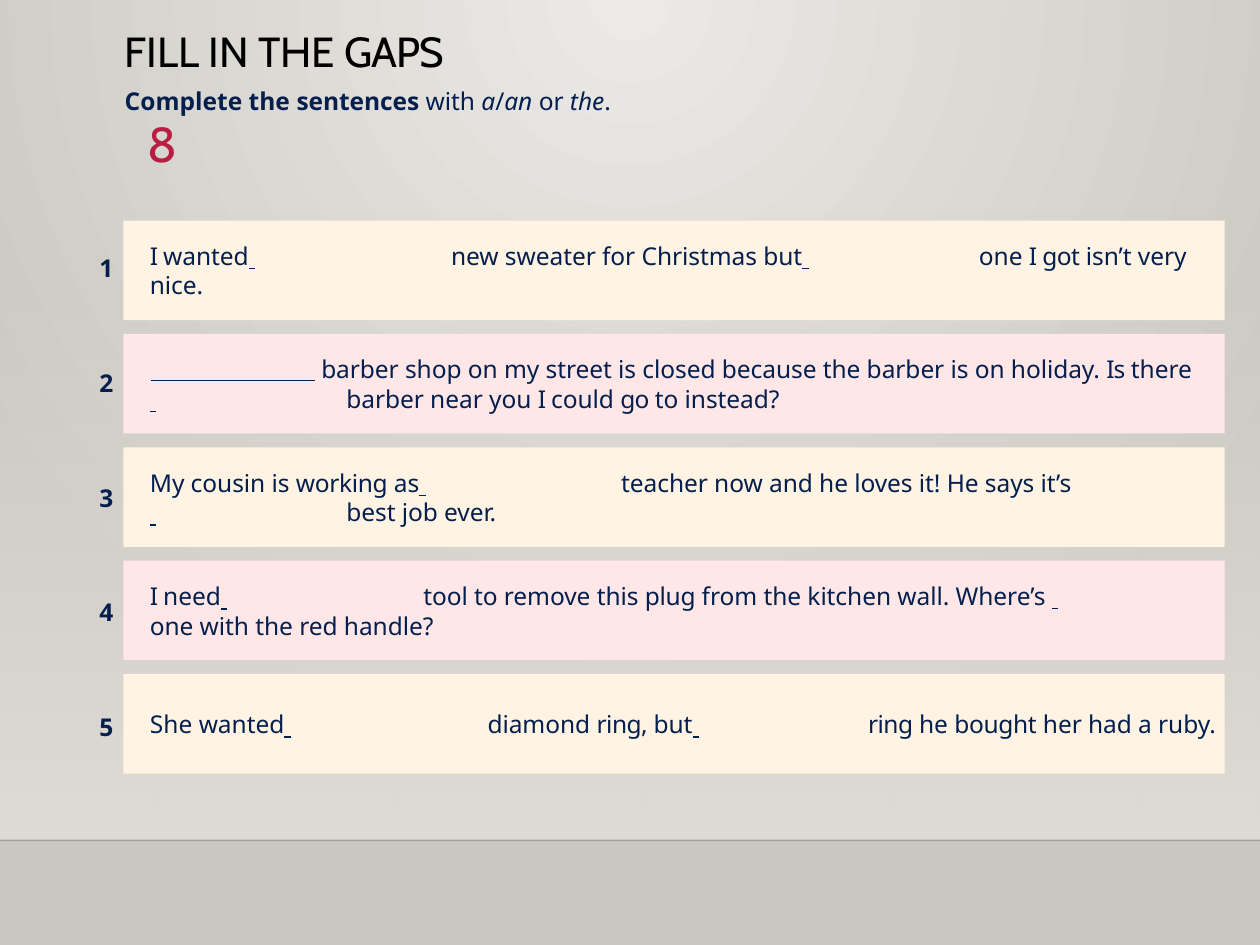
from lxml import etree
from pptx import Presentation
from pptx import util as u
from pptx.dml.color import RGBColor
from pptx.enum import shapes, text
from pptx.oxml import parse_xml
from pptx.oxml.ns import nsdecls, qn

NAVY = RGBColor(0x04, 0x1F, 0x4E)
BLANK_LINE = RGBColor(0x03, 0x1E, 0x4D)
CRIMSON = RGBColor(0xB7, 0x1E, 0x42)
BLACK = RGBColor(0, 0, 0)
FLOOR_LINE = RGBColor(0, 0, 1)
CREAM = RGBColor(0xFF, 0xF3, 0xE3)
PINK = RGBColor(0xFF, 0xE7, 0xE7)
LIGHT = RGBColor(0xEC, 0xEA, 0xE7)
GREY = RGBColor(0xCA, 0xC7, 0xC1)
STONE = RGBColor(0xDF, 0xDB, 0xD5)

BODY, HEADING, SERIF = "Noto Sans", "Cabin", "Times New Roman"
INDENT = 0.21
TIGHT = -0.05
BLANK = " \t"

SENTENCES = [
    [(INDENT, [2.39, 6.58],
      [("I ", -0.8), "wanted", BLANK, "new sweater for Christmas but", BLANK,
       "one ", ("I ", -0.8), ("got ", -0.3), "isn’t very"]),
     (INDENT, [], ["nice."])],
    [(1.57, [], ["barber shop on my street is closed because the barber is on holiday. ",
                 ("Is ", -0.5), "there"]),
     (INDENT, [1.56], [(BLANK, 0), "barber near you ", ("I ", -0.8), "could ",
                       ("go ", -0.5), "to instead?"])],
    [(INDENT, [3.74], ["My cousin is ", ("working ", -0.2), "as", BLANK,
                       "teacher now and he loves it! He says it’s"]),
     (INDENT, [1.56], [(BLANK, 0), "best job ever."])],
    [(INDENT, [2.17, 8.52],
      [("I ", -0.8), "need", BLANK, "tool to remove this ", ("plug ", -0.2),
       "from the kitchen wall. Where’s ", (BLANK, 0, SERIF)]),
     (INDENT, [], ["one with the red handle?"])],
    [(INDENT, [2.68, 5.7],
      [("She ", 0), "wanted", BLANK, "diamond ", ("ring, ", -0.3), "but", BLANK,
       ("ring ", -0.3), "he ", ("bought ", -0.2), "her had a ruby."])],
]


def add_text(paragraph, content, size=14, font=BODY, color=NAVY, bold=False,
             italic=False, underline=False, spacing=0):
    run = paragraph.add_run()
    run.text = content
    run.font.size = u.Pt(size)
    run.font.name = font
    run.font.color.rgb = color
    run.font.bold = bold
    run.font.italic = italic
    run.font.underline = underline
    if spacing:
        run.font._element.set("spc", str(round(spacing * 100)))


def prepare_frame(shape, anchor=text.MSO_ANCHOR.TOP, top_inset=0.01):
    frame = shape.text_frame
    frame.word_wrap = True
    frame.auto_size = text.MSO_AUTO_SIZE.NONE
    frame.vertical_anchor = anchor
    frame.margin_left = frame.margin_right = frame.margin_bottom = 0
    frame.margin_top = u.Inches(top_inset)
    return frame


def set_layout(paragraph, indent, tabs=()):
    properties = paragraph._p.get_or_add_pPr()
    properties.set("marL", str(u.Inches(indent)))
    if tabs:
        tab_list = etree.SubElement(properties, qn("a:tabLst"))
        for position in tabs:
            etree.SubElement(tab_list, qn("a:tab"), pos=str(u.Inches(position)), algn="l")


def add_label(slide, left, top, width, height):
    box = slide.shapes.add_textbox(*map(u.Inches, (left, top, width, height)))
    paragraph = prepare_frame(box).paragraphs[0]
    set_layout(paragraph, 0.01)
    return paragraph


def add_line(slide, left, right, y, color, width):
    line = slide.shapes.add_connector(
        shapes.MSO_CONNECTOR.STRAIGHT, *map(u.Inches, (left, y, right, y)))
    line.line.color.rgb = color
    line.line.width = u.Pt(width)
    etree.SubElement(line.element.spPr, qn("a:effectLst"))
    return line


def apply_gradient(element, start, end, direction, start_alpha=100):
    old = element.find(".//" + qn("a:gradFill"))
    new = parse_xml(
        f'<a:gradFill {nsdecls("a")} rotWithShape="1"><a:gsLst>'
        f'<a:gs pos="0"><a:srgbClr val="{start}"><a:alpha val="{start_alpha * 1000}"/>'
        f'</a:srgbClr></a:gs><a:gs pos="100000"><a:srgbClr val="{end}"/></a:gs>'
        f'</a:gsLst>{direction}</a:gradFill>')
    old.getparent().replace(old, new)


def add_backdrop(slide, left, top, width, height):
    slide.background.fill.gradient()
    apply_gradient(slide.element, LIGHT, GREY,
                   '<a:path path="circle"><a:fillToRect l="43000" t="0" r="43000" '
                   'b="100000"/></a:path>')
    wall = slide.shapes.add_shape(
        shapes.MSO_SHAPE.RECTANGLE, *map(u.Inches, (left, top, width, height)))
    wall.shadow.inherit = False
    wall.line.fill.background()
    wall.fill.gradient()
    apply_gradient(wall.element, STONE, STONE, '<a:lin ang="5400000" scaled="0"/>', 0)
    floor = add_line(slide, left, left + width, top + height + 0.01, FLOOR_LINE, 1)
    color = floor.element.find(".//" + qn("a:srgbClr"))
    etree.SubElement(color, qn("a:alpha"), val="20000")


def add_header(slide, left, top):
    title = slide.shapes.title
    title.left, title.top, title.width, title.height = map(
        u.Inches, (left, top, 3.28, 0.43))
    paragraph = prepare_frame(title).paragraphs[0]
    paragraph.alignment = text.PP_ALIGN.LEFT
    set_layout(paragraph, 0.01)
    for words, spacing in (("FILL ", 0), ("IN THE ", TIGHT), ("GAPS", -0.5)):
        add_text(paragraph, words, size=24, font=HEADING, color=BLACK, spacing=spacing)

    number = add_label(slide, left - 0.44, top + 0.7, 0.87, 0.55)
    number.alignment = text.PP_ALIGN.RIGHT
    add_text(number, "8", size=28, font=HEADING, color=CRIMSON)

    instruction = add_label(slide, left, top + 0.48, 3.95, 0.26)
    add_text(instruction, "Complete the ", bold=True)
    add_text(instruction, "sentences ", bold=True, spacing=TIGHT)
    for words, italic in (("with ", False), ("a", True), ("/", False), ("an ", True),
                          ("or ", False), ("the", True), (".", False)):
        add_text(instruction, words, italic=italic, spacing=TIGHT)


def add_sentence(slide, left, top, width, height, color, lines):
    box = slide.shapes.add_shape(
        shapes.MSO_SHAPE.RECTANGLE, *map(u.Inches, (left, top, width, height)))
    box.shadow.inherit = False
    box.fill.solid()
    box.fill.fore_color.rgb = color
    box.line.fill.background()
    frame = prepare_frame(box, text.MSO_ANCHOR.MIDDLE, top_inset=0)
    for index, (indent, tabs, runs) in enumerate(lines):
        paragraph = frame.add_paragraph() if index else frame.paragraphs[0]
        paragraph.alignment = text.PP_ALIGN.LEFT
        set_layout(paragraph, indent, tabs)
        for run in runs:
            words, spacing, *fonts = (run, TIGHT) if isinstance(run, str) else run
            add_text(paragraph, words, font=fonts[0] if fonts else BODY,
                     spacing=spacing, underline=words == BLANK)
    if lines[0][0] > INDENT:
        add_line(slide, left + 0.22, left + 1.52, top + 0.37, BLANK_LINE, 1)


def add_exercise(slide, left, top, width, row_height, pitch):
    for index, lines in enumerate(SENTENCES):
        number = add_label(slide, left - 0.2, top + 0.25 + index * 0.91, 0.14, 0.26)
        add_text(number, str(index + 1), bold=True)
        add_sentence(slide, left, top + index * pitch, width, row_height,
                     PINK if index % 2 else CREAM, lines)


def main():
    presentation = Presentation()
    presentation.slide_width = u.Inches(10)
    presentation.slide_height = u.Inches(7.5)
    slide = presentation.slides.add_slide(presentation.slide_layouts[5])
    add_backdrop(slide, 0, 2.2, 10, 4.46)
    add_header(slide, 0.98, 0.19)
    add_exercise(slide, 0.98, 1.75, 8.74, 0.79, 0.9)
    presentation.save("out.pptx")


if __name__ == "__main__":
    main()
